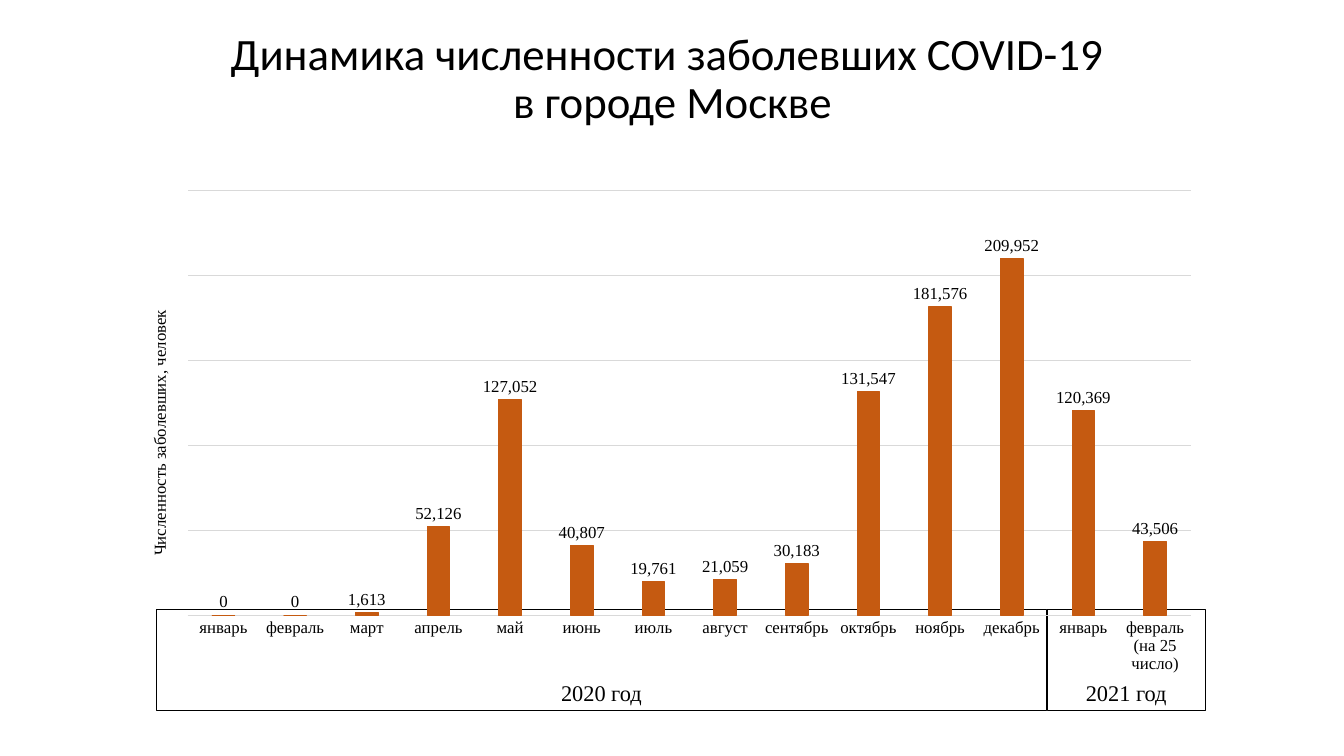
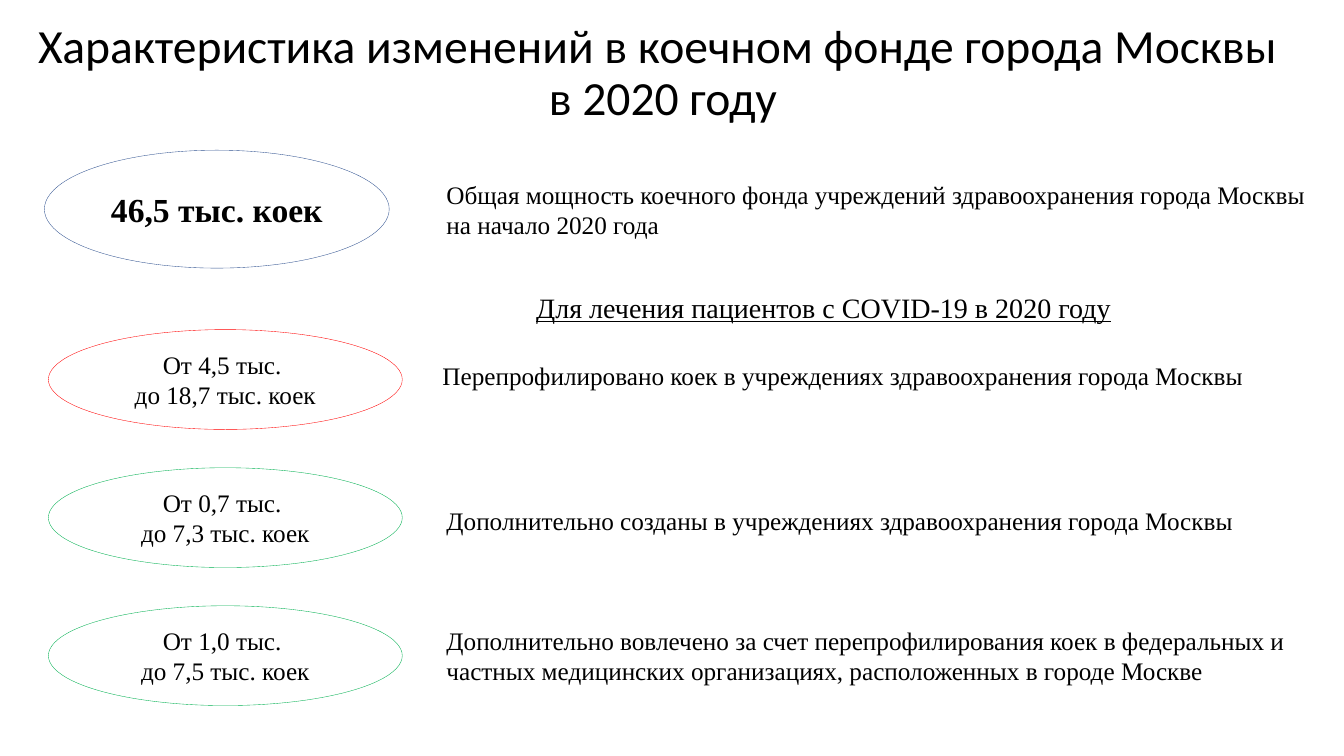
from lxml import etree
from pptx import Presentation
from pptx.chart import data as chart_data
from pptx.dml.color import RGBColor
from pptx.enum import chart as charts, shapes, text
from pptx.oxml.ns import qn
from pptx.util import Inches, Pt

BLACK = RGBColor(0x00, 0x00, 0x00)
WHITE = RGBColor(0xFF, 0xFF, 0xFF)
GRID = RGBColor(0xD9, 0xD9, 0xD9)
ORANGE = RGBColor(0xC5, 0x5A, 0x11)
BLUE = RGBColor(0x32, 0x54, 0x91)
RED = RGBColor(0xFF, 0x00, 0x00)
GREEN = RGBColor(0x00, 0xB0, 0x50)
TITLE_FONT = "Calibri"
BODY_FONT = "Times New Roman"


def write(box, words, size, font=BODY_FONT, align=None, anchor=text.MSO_ANCHOR.TOP):
    """Fill a shape's text frame and format every run alike."""
    frame = box.text_frame
    frame.text = words
    frame.word_wrap = True
    frame.vertical_anchor = anchor
    for para in frame.paragraphs:
        para.alignment = align
        for span in para.runs:
            span.font.name = font
            span.font.size = Pt(size)
            span.font.color.rgb = BLACK


def add_outlined(slide, kind, place, line_color, words, size, anchor):
    """Add a white shape with a hairline outline and centred text."""
    shape = slide.shapes.add_shape(kind, *map(Inches, place))
    shape.shadow.inherit = False
    shape.fill.solid()
    shape.fill.fore_color.rgb = WHITE
    shape.line.color.rgb = line_color
    shape.line.width = Pt(0.25)
    write(shape, words, size, align=text.PP_ALIGN.CENTER, anchor=anchor)
    return shape


deck = Presentation()
deck.slide_width = Inches(13.33)
deck.slide_height = Inches(7.5)

# Both slides share one title style
titles = [
    ("Динамика численности заболевших COVID-19 \vв городе Москве", 32, (0.92, 0.07, 11.5, 1.45)),
    ("Характеристика изменений в коечном фонде города Москвы \vв 2020 году", 34, (0.2, 0.01, 12.75, 1.45)),
]
for words, size, place in titles:
    slide = deck.slides.add_slide(deck.slide_layouts[5])
    title = slide.shapes.title
    title.left, title.top, title.width, title.height = map(Inches, place)
    write(title, words, size, TITLE_FONT, text.PP_ALIGN.CENTER, text.MSO_ANCHOR.MIDDLE)
    title.text_frame.auto_size = text.MSO_AUTO_SIZE.NONE
    title.text_frame.paragraphs[0].line_spacing = 0.9
cases_slide, beds_slide = deck.slides

# Slide 1: year frames behind the chart
for year, left, width in [("2021 год", 10.39, 1.56), ("2020 год", 1.55, 8.83)]:
    add_outlined(cases_slide, shapes.MSO_SHAPE.RECTANGLE, (left, 6.04, width, 1.01),
                 BLACK, year, 16, text.MSO_ANCHOR.BOTTOM)

# Slide 1: monthly cases
cases = chart_data.CategoryChartData(number_format="#,##0")
cases.categories = ["январь", "февраль", "март", "апрель", "май", "июнь", "июль",
                    "август", "сентябрь", "октябрь", "ноябрь", "декабрь",
                    "январь", "февраль (на 25 число)"]
cases.add_series("Series 1", [0, 0, 1613, 52126, 127052, 40807, 19761, 21059, 30183,
                              131547, 181576, 209952, 120369, 43506])
chart = cases_slide.shapes.add_chart(
    charts.XL_CHART_TYPE.COLUMN_CLUSTERED,
    Inches(1.2), Inches(1.8), Inches(10.84), Inches(4.98), cases).chart
chart.has_legend = False
chart.has_title = False
chart.font.name = TITLE_FONT
chart.font.size = Pt(10)
chart.font.color.rgb = BLACK

plot = chart.plots[0]
plot.vary_by_categories = False
plot.gap_width = 219
plot.overlap = -27
bars = plot.series[0].format
bars.fill.solid()
bars.fill.fore_color.rgb = ORANGE
bars.line.color.rgb = ORANGE
bars.line.width = Pt(0.75)
plot.has_data_labels = True
labels = plot.data_labels
labels.show_value = True
labels.position = charts.XL_LABEL_POSITION.OUTSIDE_END
labels.number_format = "#,##0"
labels.number_format_is_linked = False

months = chart.category_axis
months.major_tick_mark = charts.XL_TICK_MARK.NONE
counts = chart.value_axis
counts.visible = False
counts.minimum_scale = 0
counts.maximum_scale = 250000
counts.major_unit = 50000
counts.has_major_gridlines = True
for line in (months.format.line, counts.major_gridlines.format.line):
    line.color.rgb = GRID
    line.width = Pt(0.75)

counts.has_title = True
axis_title = counts.axis_title
axis_title.text_frame.text = "Численность заболевших, человек"
title_font = axis_title.text_frame.paragraphs[0].runs[0].font
title_font.bold = False
for font in (labels.font, months.tick_labels.font, title_font):
    font.name = BODY_FONT
    font.size = Pt(12)
    font.color.rgb = BLACK

# Fixed places for the plot and the turned axis title, as shares of the chart
chart_xml = chart.element
title_xml = chart_xml.find(".//" + qn("c:valAx") + "/" + qn("c:title"))
turned = title_xml.find(".//" + qn("a:bodyPr"))
turned.set("rot", "-5400000")
turned.set("vert", "horz")
placements = [
    (chart_xml.find(".//" + qn("c:plotArea")), 0,
     {"layoutTarget": "inner", "xMode": "edge", "yMode": "edge",
      "x": 0.061, "y": 0.019, "w": 0.918, "h": 0.845}),
    (title_xml, 1, {"xMode": "edge", "yMode": "edge", "x": 0.023, "y": 0.25}),
]
for parent, index, settings in placements:
    layout = parent.find(qn("c:layout"))
    if layout is None:
        layout = etree.Element(qn("c:layout"))
        parent.insert(index, layout)
    manual = etree.SubElement(layout, qn("c:manualLayout"))
    for name, value in settings.items():
        etree.SubElement(manual, qn("c:" + name)).set("val", str(value))

# Slide 2: bed counts
total = add_outlined(beds_slide, shapes.MSO_SHAPE.OVAL, (0.44, 1.49, 3.42, 1.17),
                     BLUE, "46,5 тыс. коек", 24, text.MSO_ANCHOR.MIDDLE)
total.text_frame.paragraphs[0].runs[0].font.bold = True

changes = [
    (RED, "От 4,5 тыс. \nдо 18,7 тыс. коек"),
    (GREEN, "От 0,7 тыс. \nдо 7,3 тыс. коек"),
    (GREEN, "От 1,0 тыс. \nдо 7,5 тыс. коек"),
]
for row, (color, words) in enumerate(changes):
    add_outlined(beds_slide, shapes.MSO_SHAPE.OVAL, (0.48, 3.27 + 1.37 * row, 3.51, 0.99),
                 color, words, 18, text.MSO_ANCHOR.MIDDLE)

# Slide 2: what each count means
descriptions = [
    (4.33, 1.73, 0.71, "Общая мощность коечного фонда учреждений здравоохранения города Москвы на начало 2020 года"),
    (4.29, 3.53, 0.4, "Перепрофилировано коек в учреждениях здравоохранения города Москвы"),
    (4.33, 4.96, 0.4, "Дополнительно созданы в учреждениях здравоохранения города Москвы"),
    (4.33, 6.15, 0.71, "Дополнительно вовлечено за счет перепрофилирования коек в федеральных и "
                       "частных медицинских организациях, расположенных в городе Москве"),
]
for left, top, height, words in descriptions:
    box = beds_slide.shapes.add_textbox(Inches(left), Inches(top), Inches(8.79), Inches(height))
    write(box, words, 18)

subheading = beds_slide.shapes.add_textbox(Inches(5.22), Inches(2.83), Inches(5.96), Inches(0.44))
write(subheading, "Для лечения пациентов с COVID-19 в 2020 году", 20)
subheading.text_frame.paragraphs[0].runs[0].font.underline = True

deck.save("out.pptx")
